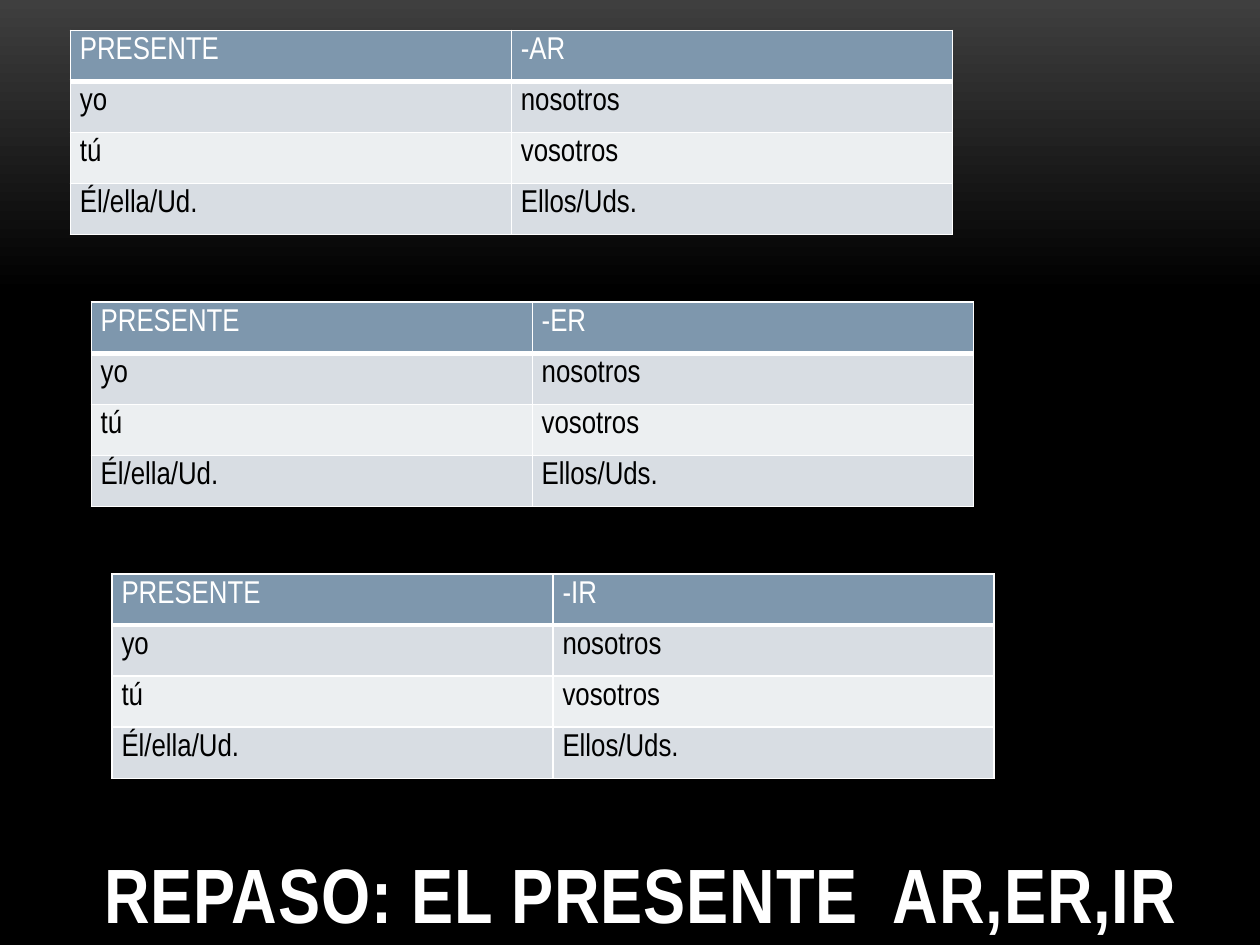
from dataclasses import dataclass
from pptx import Presentation
from pptx import util as u
from pptx.dml.color import RGBColor as Rgb
from pptx.enum import text
from pptx.oxml import parse_xml
from pptx.oxml.ns import nsdecls


@dataclass
class Theme:
    font: str = "Arial Narrow"
    big: int = 44
    body: int = 18
    white: str = "FFFFFF"
    black: str = "000000"
    glow: str = "3F3F3F"
    head: str = "7E97AD"
    bands: tuple = ("D8DDE3", "ECEFF1")


class Deck:
    def __init__(self, theme):
        self.theme = theme
        self.file = Presentation()
        self.file.slide_width = u.Cm(25.4)
        self.file.slide_height = u.Cm(19.05)
        self.slide = self.file.slides.add_slide(self.file.slide_layouts[6])

    def back(self):
        fill = self.slide.background.fill
        fill.gradient()
        fill.gradient_angle = 270
        stops = zip(fill.gradient_stops, (self.theme.glow, self.theme.black), (0, 0.31))
        for stop, color, place in stops:
            stop.color.rgb = Rgb.from_string(color)
            stop.position = place

    def run(self, para, words, size, color, bold=False):
        run = para.add_run()
        run.text = words
        font = run.font
        font.name, font.size, font.bold = self.theme.font, u.Pt(size), bold
        font.color.rgb = Rgb.from_string(color)
        return run

    def title(self, words, x, y, w, h):
        box = self.slide.shapes.add_textbox(u.Cm(x), u.Cm(y), u.Cm(w), u.Cm(h))
        frame = box.text_frame
        frame.word_wrap = True
        frame.vertical_anchor = text.MSO_ANCHOR.BOTTOM
        run = self.run(frame.paragraphs[0], words, self.theme.big, self.theme.white, True)
        run.font._element.set("spc", "50")

    def edge(self, cell, side, width):
        cell._tc.get_or_add_tcPr().append(parse_xml(
            f'<a:ln{side} {nsdecls("a")} w="{u.Pt(width)}"><a:solidFill>'
            f'<a:srgbClr val="{self.theme.white}"/></a:solidFill></a:ln{side}>'))

    def cell(self, cell, words, row):
        top = row == 0
        cell.margin_left = cell.margin_right = u.Cm(0.19)
        cell.margin_top = cell.margin_bottom = u.Cm(0.13)
        for side in "LRTB":
            self.edge(cell, side, 3 if top and side == "B" else 1)
        cell.fill.solid()
        shade = self.theme.head if top else self.theme.bands[(row - 1) % 2]
        cell.fill.fore_color.rgb = Rgb.from_string(shade)
        color = self.theme.white if top else self.theme.black
        self.run(cell.text_frame.paragraphs[0], words, self.theme.body, color)

    def table(self, rows, x, y, w, h):
        grid = self.slide.shapes.add_table(
            len(rows), len(rows[0]), u.Cm(x), u.Cm(y), u.Cm(w), u.Cm(h)).table
        for r, row in enumerate(rows):
            for c, words in enumerate(row):
                self.cell(grid.cell(r, c), words, r)


FORMS = [("yo", "nosotros"), ("tú", "vosotros"), ("Él/ella/Ud.", "Ellos/Uds.")]


def main():
    deck = Deck(Theme())
    deck.back()
    deck.title("REPASO: EL PRESENTE  AR,ER,IR", 1.85, 14.86, 23.98, 4.19)
    for i, verb in enumerate(("-AR", "-ER", "-IR")):
        rows = [("PRESENTE", verb)] + FORMS
        deck.table(rows, 1.42 + 0.42 * i, 0.61 + 5.48 * i, 17.78, 4.12)
    deck.file.save("out.pptx")


if __name__ == "__main__":
    main()
